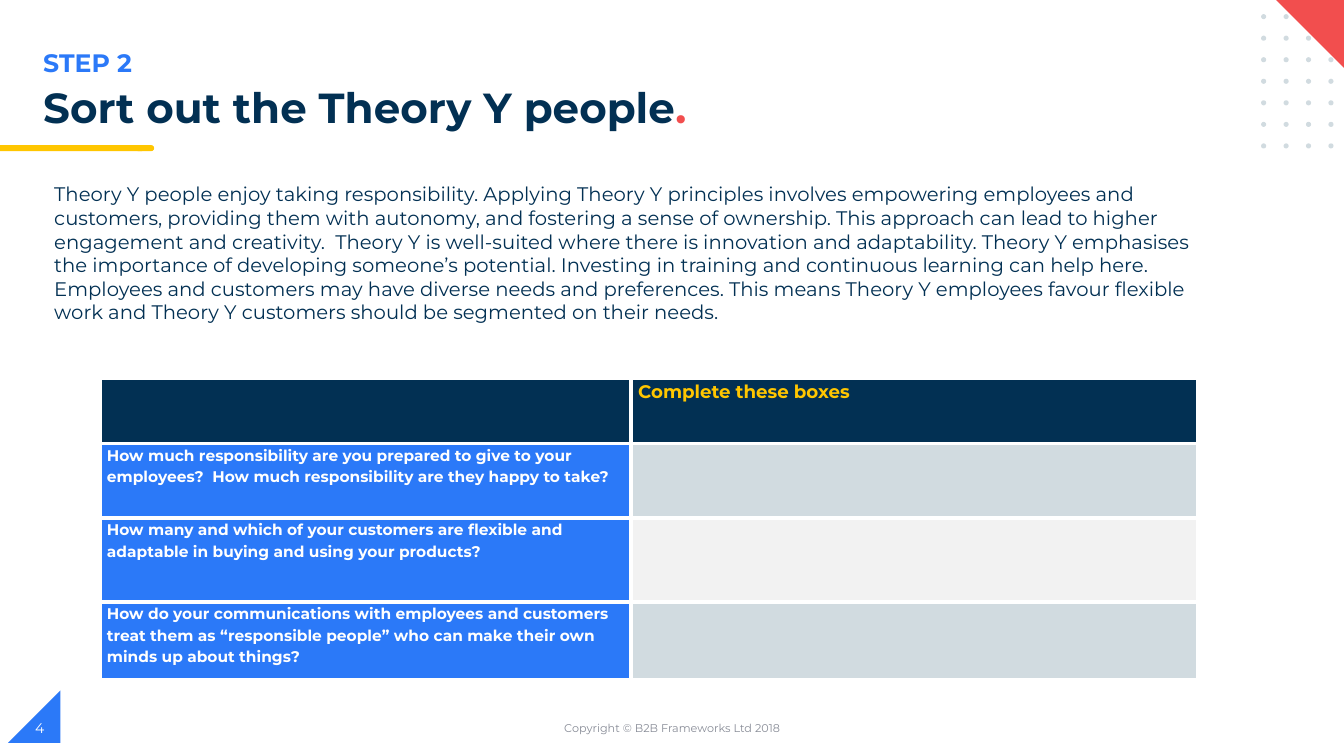
from collections import namedtuple
from itertools import product

from lxml.etree import SubElement
from pptx import Presentation
from pptx.dml.color import RGBColor
from pptx.enum.shapes import MSO_SHAPE as Shape
from pptx.enum.text import MSO_ANCHOR as Anchor, PP_ALIGN as Align
from pptx.oxml.ns import qn
from pptx.util import Inches, Pt

NAVY = RGBColor(0x02, 0x30, 0x53)
BLUE = RGBColor(0x2B, 0x79, 0xF8)
YELLOW = RGBColor(0xFF, 0xC6, 0x00)
RED = RGBColor(0xF2, 0x4E, 0x4E)
MIST = RGBColor(0xD1, 0xDB, 0xE0)
PALE = RGBColor(0xF2, 0xF2, 0xF2)
GREY = RGBColor(0x88, 0x8C, 0x97)
WHITE = RGBColor(0xFF, 0xFF, 0xFF)

FONT = "Montserrat"
WIDTH, HEIGHT = Inches(13.33), Inches(7.5)
COLUMN, ROW = WIDTH / 100, HEIGHT / 100

Box = namedtuple("Box", "left top width height")

INTRO = (
    "Theory Y people enjoy taking responsibility. Applying Theory Y principles involves "
    "empowering employees and customers, providing them with autonomy, and fostering a sense "
    "of ownership. This approach can lead to higher engagement and creativity.  Theory Y is "
    "well-suited where there is innovation and adaptability. Theory Y emphasises the importance "
    "of developing someone’s potential. Investing in training and continuous learning can help "
    "here. Employees and customers may have diverse needs and preferences. This means Theory Y "
    "employees favour flexible work and Theory Y customers should be segmented on their needs."
)
QUESTIONS = [
    "How much responsibility are you prepared to give to your employees?  "
    "How much responsibility are they happy to take?",
    "How many and which of your customers are flexible and adaptable in buying "
    "and using your products?",
    "How do your communications with employees and customers treat them as "
    "“responsible people” who can make their own minds up about things?",
]


def within(box, dx, dy, width, height):
    return Box(box.left + dx, box.top + dy, width, height)


def emu(box):
    return (round(box.left * COLUMN), round(box.top * ROW),
            round(box.width * COLUMN), round(box.height * ROW))


def write(frame, *pieces, size, color, bold=False, align=Align.LEFT,
          anchor=Anchor.TOP, spacing=None):
    frame.word_wrap = True
    frame.vertical_anchor = anchor
    paragraph = frame.paragraphs[0]
    paragraph.alignment = align
    paragraph.line_spacing = spacing
    for piece in pieces:
        words, shade = piece if isinstance(piece, tuple) else (piece, color)
        run = paragraph.add_run()
        run.text = words
        run.font.name, run.font.size = FONT, Pt(size)
        run.font.bold, run.font.color.rgb = bold, shade


def add_text(slide, box, *pieces, **style):
    write(slide.shapes.add_textbox(*emu(box)).text_frame, *pieces, **style)


def add_figure(slide, kind, box, color, rotation=0):
    figure = slide.shapes.add_shape(kind, *emu(box))
    figure.shadow.inherit = False
    figure.fill.solid()
    figure.fill.fore_color.rgb = color
    figure.line.fill.background()
    figure.rotation = rotation


def add_header(slide, box):
    add_text(slide, within(box, 2.48, 0, 50.18, 5.33), "STEP 2",
             size=18, color=BLUE, bold=True)
    add_text(slide, within(box, 2.48, 5.33, 83.63, 7.47),
             "Sort out the Theory Y people", (".", RED),
             size=30, color=NAVY, bold=True, spacing=0.9)
    add_figure(slide, Shape.FLOWCHART_TERMINATOR, within(box, 10.05, 13.6, 1.42, 0.8), YELLOW)
    add_figure(slide, Shape.RECTANGLE, within(box, 0, 13.6, 10.58, 0.8), YELLOW)


def add_corner(slide, box):
    for row, column in product(range(7), range(4)):
        dot = within(box, column * 1.67, 2 + row * 2.85, 0.38, 0.67)
        add_figure(slide, Shape.OVAL, dot, MIST)
    add_figure(slide, Shape.RIGHT_TRIANGLE, within(box, 1.05, 0, 5.4, 9.6), RED, rotation=180)


def fill_cell(cell, color):
    cell.margin_left = cell.margin_right = Inches(0.07)
    cell.margin_top = cell.margin_bottom = 0
    properties = cell._tc.get_or_add_tcPr()
    for side in ("a:lnL", "a:lnR", "a:lnT", "a:lnB"):
        border = SubElement(properties, qn(side), w=str(Pt(3)))
        SubElement(SubElement(border, qn("a:solidFill")), qn("a:srgbClr"), val=str(WHITE))
    cell.fill.solid()
    cell.fill.fore_color.rgb = color


def add_worksheet(slide, box):
    widths = (39.53, box.width - 39.53)
    heights = (8.67, 9.87, 11.07, 10.27)
    sheet = slide.shapes.add_table(len(heights), len(widths), *emu(box)).table
    for column, width in zip(sheet.columns, widths):
        column.width = round(width * COLUMN)
    for row, height in zip(sheet.rows, heights):
        row.height = round(height * ROW)

    style = dict(bold=True, anchor=Anchor.MIDDLE, spacing=1.15)
    fill_cell(sheet.cell(0, 0), NAVY)
    fill_cell(sheet.cell(0, 1), NAVY)
    write(sheet.cell(0, 1).text_frame, "Complete these boxes", size=13, color=YELLOW, **style)
    for number, question in enumerate(QUESTIONS, 1):
        fill_cell(sheet.cell(number, 0), BLUE)
        fill_cell(sheet.cell(number, 1), MIST if number % 2 else PALE)
        write(sheet.cell(number, 0).text_frame, question, size=11, color=WHITE, **style)


def add_footer(slide, box):
    add_figure(slide, Shape.RIGHT_TRIANGLE, within(box, 0.6, 0, 3.9, 6.93), BLUE, rotation=270)
    add_text(slide, within(box, 33.15, 2.27, 33.75, 5.33), "Copyright © B2B Frameworks Ltd 2018",
             size=8, color=GREY, align=Align.CENTER, anchor=Anchor.MIDDLE)
    add_text(slide, within(box, 1.88, 2.27, 22.5, 5.33), "4",
             size=10, color=WHITE, anchor=Anchor.MIDDLE)


def main():
    deck = Presentation()
    deck.slide_width, deck.slide_height = WIDTH, HEIGHT
    slide = deck.slides.add_slide(deck.slide_layouts[6])
    add_header(slide, Box(0, 5.6, 86.11, 14.4))
    add_corner(slide, Box(93.83, -0.13, 6.17, 20))
    add_text(slide, Box(3.3, 23.47, 86.33, 20.27), INTRO, size=14, color=NAVY)
    add_worksheet(slide, Box(7.43, 50, 81.68, 39.88))
    add_footer(slide, Box(0, 91.33, 100, 8.67))
    deck.save("out.pptx")


if __name__ == "__main__":
    main()
